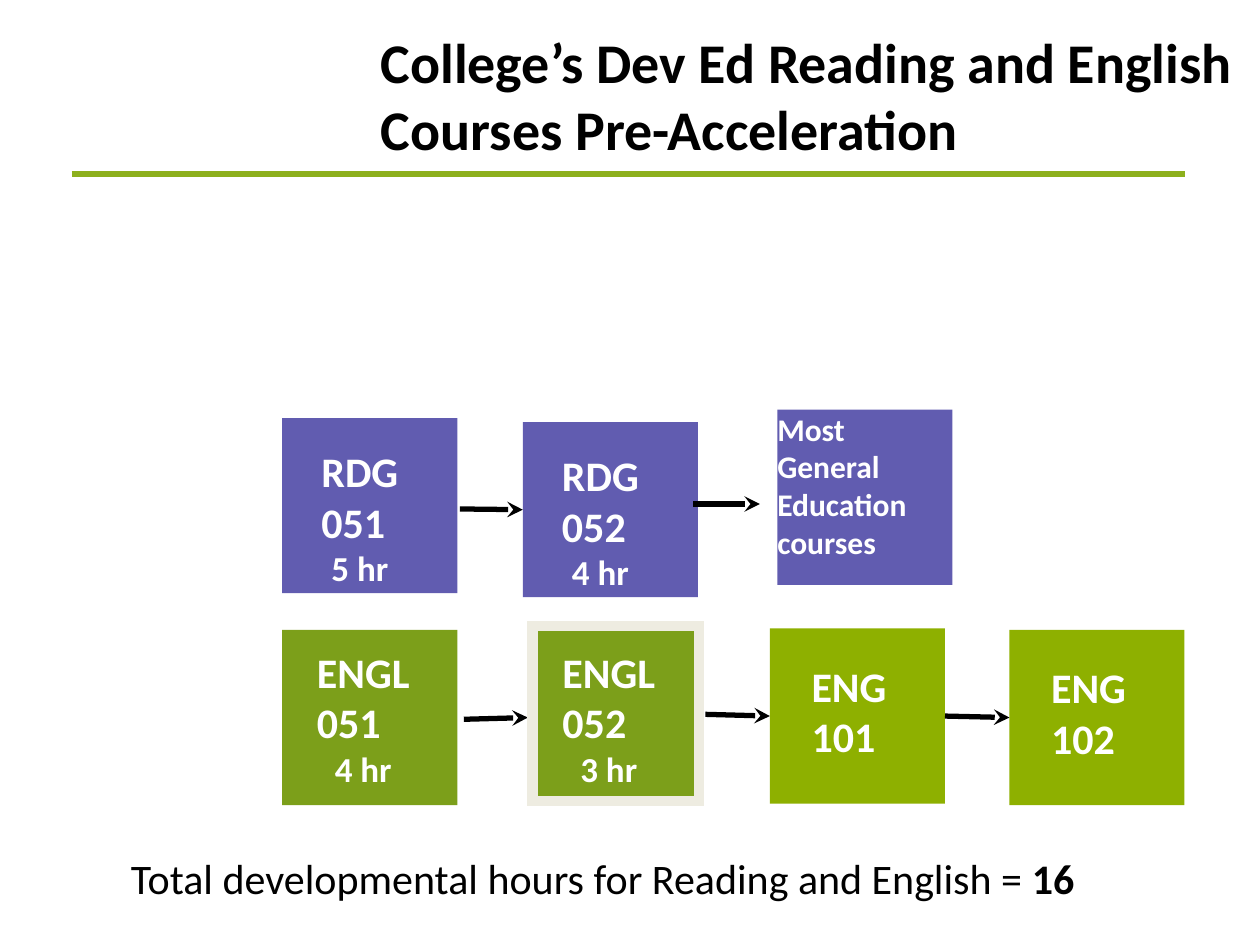
from lxml.etree import SubElement
from pptx import Presentation
from pptx.dml.color import RGBColor
from pptx.enum.shapes import MSO_CONNECTOR, MSO_SHAPE
from pptx.enum.text import MSO_ANCHOR, MSO_AUTO_SIZE, PP_ALIGN
from pptx.oxml.ns import qn
from pptx.util import Cm, Pt

COLORS = {
    "purple": "615CB0", "olive": "7C9F1A", "lime": "8EB000", "rule": "8DB01D",
    "frame": "EEECE1", "black": "000000", "white": "FFFFFF",
}
SIDE = 3.53
LABELS = {
    "RDG": {"offset": (0.79, 0.56), "size": (1.55, 2.9), "inset": 0},
    "ENGL": {"offset": (0.6, 0.23), "size": (2.11, 3.12), "inset": 0.1},
    "ENG": {"offset": (0.84, 0.64), "size": (1.52, 2.06), "inset": 0},
}
COURSES = [
    ("RDG", "051", "5 hr", 5.69, 8.43, "purple"),
    ("RDG", "052", "4 hr", 10.54, 8.51, "purple"),
    ("ENGL", "051", "4 hr", 5.69, 12.7, "olive"),
    ("ENGL", "052", "3 hr", 10.64, 12.7, "olive"),
    ("ENG", "101", None, 15.52, 12.67, "lime"),
    ("ENG", "102", None, 20.35, 12.7, "lime"),
]


def rgb(name):
    return RGBColor.from_string(COLORS[name])


def format_frame(tf, inset=None, **values):
    if inset is not None:
        for edge in ("left", "top", "right", "bottom"):
            setattr(tf, f"margin_{edge}", Cm(inset))
    for name, value in values.items():
        setattr(tf, name, value)


def add_run(p, text, size, color, bold=True):
    r = p.add_run()
    r.text = text
    for name, value in {"name": "Calibri", "size": Pt(size), "bold": bold}.items():
        setattr(r.font, name, value)
    r.font.color.rgb = rgb(color)


def add_box(s, x, y, fill=None, width=SIDE):
    sp = s.shapes.add_shape(MSO_SHAPE.RECTANGLE, Cm(x), Cm(y), Cm(width), Cm(SIDE))
    sp.shadow.inherit = False
    if fill:
        sp.fill.solid()
        sp.fill.fore_color.rgb = rgb(fill)
        sp.line.fill.background()
    else:
        sp.fill.background()
        sp.line.color.rgb = rgb("frame")
        sp.line.width = Pt(6)
        SubElement(sp.line._get_or_add_ln(), qn("a:miter"), lim="800000")
    return sp


def add_text_box(s, x, y, width, height, inset=None):
    tf = s.shapes.add_textbox(Cm(x), Cm(y), Cm(width), Cm(height)).text_frame
    format_frame(tf, inset, word_wrap=False, auto_size=MSO_AUTO_SIZE.SHAPE_TO_FIT_TEXT)
    return tf


def add_course(s, subject, number, hours, x, y, fill):
    sp = add_box(s, x, y, fill)
    label = LABELS[subject]
    dx, dy = label["offset"]
    tf = add_text_box(s, x + dx, y + dy, *label["size"], label["inset"])
    add_run(tf.paragraphs[0], subject, 24, "white")
    add_run(tf.add_paragraph(), number, 24, "white")
    if hours:
        p = tf.add_paragraph()
        p.alignment = PP_ALIGN.CENTER
        add_run(p, hours, 20, "white")
    return sp


def add_line(s, start, end, color):
    line = s.shapes.add_connector(MSO_CONNECTOR.STRAIGHT, *map(Cm, start + end))
    line.line.color.rgb = rgb(color)
    line.line.width = Pt(3)
    SubElement(line._element.spPr, qn("a:effectLst"))
    return line


def add_arrow(s, x, y, source=None, target=None):
    arrow = add_line(s, (x, y), (x + 1.35, y), "black")
    SubElement(arrow.line._get_or_add_ln(), qn("a:tailEnd"), type="stealth")
    if source:
        arrow.begin_connect(source, 3)
    if target:
        arrow.end_connect(target, 1)


def add_title(s, text):
    sp = s.shapes.title
    bounds = {"left": 7.42, "top": 0.43, "width": 19.2, "height": 3}
    for name, value in bounds.items():
        setattr(sp, name, Cm(value))
    format_frame(sp.text_frame, word_wrap=True, auto_size=MSO_AUTO_SIZE.NONE,
                 vertical_anchor=MSO_ANCHOR.TOP)
    p = sp.text_frame.paragraphs[0]
    p.alignment = PP_ALIGN.LEFT
    add_run(p, text, 32, "black")


def add_destination(s, text):
    tf = add_box(s, 15.67, 8.26, "purple").text_frame
    format_frame(tf, 0, word_wrap=True, vertical_anchor=MSO_ANCHOR.TOP)
    p = tf.paragraphs[0]
    p.alignment = PP_ALIGN.LEFT
    add_run(p, text, 18, "white")


def add_total(s, text, hours):
    p = add_text_box(s, 2.39, 17.07, 19.86, 1.27).paragraphs[0]
    add_run(p, text, 24, "black", False)
    add_run(p, hours, 24, "black")


def main():
    prs = Presentation()
    prs.slide_width, prs.slide_height = Cm(25.4), Cm(19.05)
    s = prs.slides.add_slide(prs.slide_layouts[5])
    add_title(s, "College’s Dev Ed Reading and English Courses Pre-Acceleration")
    add_line(s, (1.45, 3.51), (23.88, 3.51), "rule")
    boxes = {course[:2]: add_course(s, *course) for course in COURSES}
    add_destination(s, "Most General Education courses")
    add_arrow(s, 9.27, 10.26, target=boxes["RDG", "052"])
    add_arrow(s, 13.97, 10.16)
    add_arrow(s, 9.35, 14.5, target=boxes["ENGL", "052"])
    add_box(s, 10.74, 12.62, width=3.35)
    add_arrow(s, 14.22, 14.4, target=boxes["ENG", "101"])
    add_arrow(s, 19.05, 14.43, boxes["ENG", "101"], boxes["ENG", "102"])
    add_total(s, "Total developmental hours for Reading and English = ", "16")
    prs.save("out.pptx")


if __name__ == "__main__":
    main()
